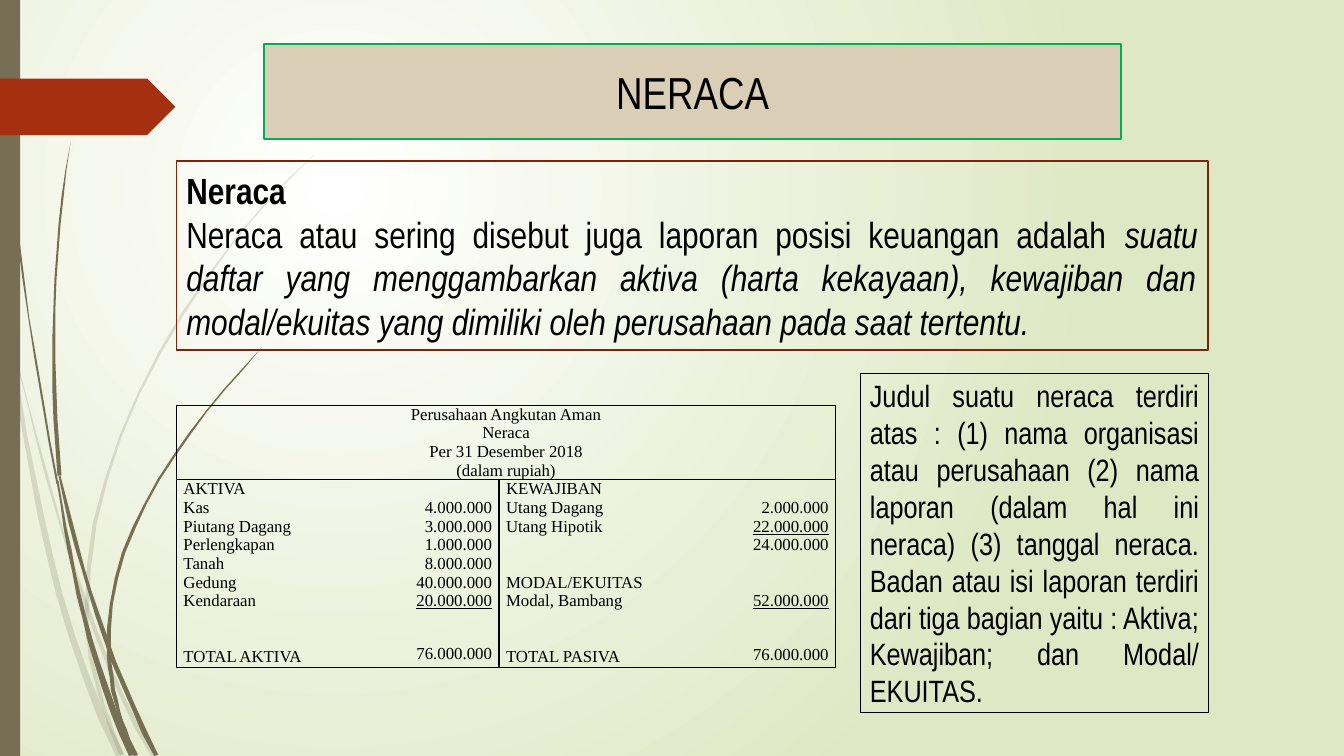
"""Builds the slide that explains the balance sheet (neraca)."""
from dataclasses import dataclass, field
from math import hypot

from lxml import etree
from pptx import Presentation
from pptx.dml.color import RGBColor
from pptx.enum.shapes import MSO_SHAPE
from pptx.enum.text import MSO_ANCHOR, MSO_AUTO_SIZE, PP_ALIGN
from pptx.oxml.ns import qn
from pptx.util import Inches, Pt

CELL = Inches(0.01)
COLUMNS, ROWS = 1333, 750
TITLE_ONLY = 5
LINE_HEIGHT = 13.35
BLADE_STEPS = 12
NO_STYLE = "{2D5ABB26-0587-4C30-8999-92F81FD0307C}"

RECTANGLE, PENTAGON = MSO_SHAPE.RECTANGLE, MSO_SHAPE.PENTAGON
MIDDLE = MSO_ANCHOR.MIDDLE
NO_AUTOFIT = MSO_AUTO_SIZE.NONE
CENTER, JUSTIFY, RIGHT = PP_ALIGN.CENTER, PP_ALIGN.JUSTIFY, PP_ALIGN.RIGHT

BLACK = RGBColor(0x00, 0x00, 0x00)
WHITE = RGBColor(0xFF, 0xFF, 0xFF)
PALE_GREEN = RGBColor(0xDF, 0xE8, 0xC4)
OLIVE = RGBColor(0x76, 0x6F, 0x54)
RUST = RGBColor(0xA5, 0x30, 0x10)
DARK_RUST = RGBColor(0x7A, 0x24, 0x0C)
SAND = RGBColor(0xDB, 0xCE, 0xB7)
GREEN = RGBColor(0x00, 0xB0, 0x50)

Point = tuple[float, float]


@dataclass(frozen=True)
class Blade:
    """A grass blade along a cubic curve, with its end widths."""
    curve: tuple[Point, Point, Point, Point]
    widths: tuple[float, float]
    opacity: int = 100

    def outline(self) -> list[Point]:
        """Return the points around the blade."""
        a, b, c, d = self.curve
        near, far = [], []
        for step in range(BLADE_STEPS + 1):
            t = step / BLADE_STEPS
            u = 1 - t
            x, y = (u**3 * a[i] + 3 * u * u * t * b[i] + 3 * u * t * t * c[i] + t**3 * d[i]
                    for i in (0, 1))
            dx, dy = (u * u * (b[i] - a[i]) + 2 * u * t * (c[i] - b[i]) + t * t * (d[i] - c[i])
                      for i in (0, 1))
            half = (u * self.widths[0] + t * self.widths[1]) / 2 / hypot(dx, dy)
            near.append((x - dy * half, min(y + dx * half, ROWS)))
            far.append((x + dy * half, min(y - dx * half, ROWS)))
        return near + far[::-1]


@dataclass(frozen=True)
class Area:
    """A block of grid columns and rows."""
    column: int
    row: int
    width: int
    height: int

    def lengths(self) -> tuple[int, ...]:
        """Return left, top, width and height."""
        return tuple(CELL * n for n in (self.column, self.row, self.width, self.height))


@dataclass(frozen=True)
class Words:
    """A run of text with its font formats."""
    text: str
    formats: dict = field(default_factory=dict)


@dataclass(frozen=True)
class Panel:
    """A framed text box."""
    area: Area
    line: RGBColor
    line_width: float
    size: int
    align: PP_ALIGN
    paragraphs: tuple[tuple[Words, ...], ...]
    fill: RGBColor | None = None


@dataclass(frozen=True)
class Entry:
    """A line of a ledger cell, with the blank lines above it."""
    text: str
    gap: float = 0
    underline: bool = False


@dataclass(frozen=True)
class Ledger:
    """A table cell with its entries and bordered sides."""
    entries: tuple[Entry, ...]
    align: PP_ALIGN
    sides: str
    top_gap: float = 0


BLADES = (
    Blade(((0, 290), (26, 420), (41, 593), (119, 750)), (3, 8), 20),
    Blade(((14, 345), (39, 450), (87, 644), (152, 750)), (1, 5), 20),
    Blade(((86, 608), (82, 430), (209, 247), (312, 153)), (4, 1), 20),
    Blade(((86, 608), (86, 650), (100, 700), (121, 750)), (4, 4), 20),
    Blade(((3, 0), (4, 157), (24, 310), (57, 480)), (1, 2)),
    Blade(((57, 477), (72, 570), (89, 656), (131, 750)), (2, 7)),
    Blade(((70, 141), (52, 250), (49, 359), (59, 472)), (1, 4)),
    Blade(((59, 472), (80, 566), (107, 656), (155, 750)), (3, 5)),
    Blade(((108, 625), (112, 520), (184, 428), (260, 344)), (4, 1)),
    Blade(((108, 625), (106, 675), (119, 720), (135, 750)), (4, 4)),
)
STRIPE = Area(0, 0, 20, ROWS)
RIBBON = Area(0, 78, 174, 56)
TITLE = Panel(Area(262, 44, 850, 94), GREEN, 1.25, 32, CENTER, ((Words("NERACA"),),), SAND)
PANELS = (
    Panel(Area(175, 160, 1023, 187), DARK_RUST, 1.25, 26, JUSTIFY, (
        (Words("Neraca", {"bold": True}),),
        (Words("Neraca atau sering disebut juga laporan posisi keuangan adalah "),
         Words("suatu daftar yang menggambarkan aktiva (harta kekayaan), kewajiban dan "
               "modal/ekuitas yang dimiliki oleh perusahaan pada saat tertentu.",
               {"italic": True})))),
    Panel(Area(853, 370, 346, 337), BLACK, 0.5, 22, JUSTIFY, ((Words(
        "Judul suatu neraca terdiri atas : (1) nama organisasi atau perusahaan (2) nama "
        "laporan (dalam hal ini neraca) (3) tanggal neraca. Badan atau isi laporan terdiri "
        "dari tiga bagian yaitu : Aktiva; Kewajiban; dan Modal/ EKUITAS."),),)),
)
SHEET = Area(175, 402, 654, 260)
SHEET_COLUMNS = (153, 167, 167, 167)
SHEET_ROWS = (74, 186)
HEADING = Ledger(tuple(map(Entry, ("Perusahaan Angkutan Aman", "Neraca", "Per 31 Desember 2018",
                                   "(dalam rupiah)"))), CENTER, "LRTB")
LEDGERS = (
    Ledger((*map(Entry, ("AKTIVA", "Kas", "Piutang Dagang", "Perlengkapan", "Tanah", "Gedung",
                         "Kendaraan")), Entry("TOTAL AKTIVA", 2)), JUSTIFY, "LTB"),
    Ledger((*map(Entry, ("4.000.000", "3.000.000", "1.000.000", "8.000.000", "40.000.000")),
            Entry("20.000.000", underline=True), Entry("76.000.000", 1.85)), RIGHT, "RTB", 1),
    Ledger((*map(Entry, ("KEWAJIBAN", "Utang Dagang", "Utang Hipotik")),
            Entry("MODAL/EKUITAS", 2), Entry("Modal, Bambang"), Entry("TOTAL PASIVA", 2)),
           JUSTIFY, "TB"),
    Ledger((Entry("2.000.000"), Entry("22.000.000", underline=True), Entry("24.000.000"),
            Entry("52.000.000", 2, True), Entry("76.000.000", 1.85)), RIGHT, "RTB", 1),
)


def add_words(para, words: Words, name: str, size: int) -> None:
    """Add one formatted run to a paragraph."""
    span = para.add_run()
    span.text = words.text
    for key, value in {"name": name, "size": Pt(size), **words.formats}.items():
        setattr(span.font, key, value)
    span.font.color.rgb = BLACK


def next_para(frame, index: int):
    """Return the first paragraph, or a new one after it."""
    return frame.add_paragraph() if index else frame.paragraphs[0]


def paint_background(page) -> None:
    """Fill the page with a circular gradient."""
    fill = page.background.fill
    fill.gradient()
    for stop, color, position in zip(fill.gradient_stops, (WHITE, PALE_GREEN), (0, 1)):
        stop.color.rgb, stop.position = color, position
    linear = next(page.element.iter(qn("a:lin")))
    circle = etree.Element(qn("a:path"), path="circle")
    etree.SubElement(circle, qn("a:fillToRect"), l="50000", t="50000", r="100000", b="100000")
    linear.getparent().replace(linear, circle)


def paint_plain(shape, color: RGBColor, opacity: int = 100) -> None:
    """Give a shape a flat fill without line or shadow."""
    shape.shadow.inherit = False
    shape.line.fill.background()
    shape.fill.solid()
    shape.fill.fore_color.rgb = color
    if opacity < 100:
        tint = next(shape.element.spPr.iter(qn("a:srgbClr")))
        etree.SubElement(tint, qn("a:alpha"), val=str(opacity * 1000))


def draw_blade(page, blade: Blade) -> None:
    """Draw one grass blade."""
    start, *others = blade.outline()
    builder = page.shapes.build_freeform(*start, scale=float(CELL))
    builder.add_line_segments(others, close=True)
    paint_plain(builder.convert_to_shape(), OLIVE, blade.opacity)


def format_panel(shape, panel: Panel) -> None:
    """Place, frame and fill in a text box or the title."""
    for key, value in zip(("left", "top", "width", "height"), panel.area.lengths()):
        setattr(shape, key, value)
    if panel.fill is None:
        shape.fill.background()
    else:
        shape.fill.solid()
        shape.fill.fore_color.rgb = panel.fill
    shape.line.color.rgb, shape.line.width = panel.line, Pt(panel.line_width)
    frame = shape.text_frame
    formats = {"word_wrap": True, "auto_size": NO_AUTOFIT, "vertical_anchor": MIDDLE}
    for key, value in formats.items():
        setattr(frame, key, value)
    for index, paragraph in enumerate(panel.paragraphs):
        para = next_para(frame, index)
        para.alignment = panel.align
        for words in paragraph:
            add_words(para, words, "Arial Narrow", panel.size)


def fill_cell(cell, ledger: Ledger) -> None:
    """Write the entries of a cell and draw its borders."""
    margins = {"margin_left": Inches(0.07), "margin_right": Inches(0.07),
               "margin_top": Pt(ledger.top_gap * LINE_HEIGHT), "margin_bottom": 0}
    for key, value in margins.items():
        setattr(cell, key, value)
    for index, entry in enumerate(ledger.entries):
        para = next_para(cell.text_frame, index)
        para.alignment, para.space_before = ledger.align, Pt(entry.gap * LINE_HEIGHT)
        add_words(para, Words(entry.text, {"underline": entry.underline}), "Times New Roman", 12)
    cell.fill.background()
    properties = cell._tc.get_or_add_tcPr()
    for index, side in enumerate(ledger.sides):
        border = etree.Element(qn(f"a:ln{side}"), w=str(Pt(1)))
        solid = etree.SubElement(border, qn("a:solidFill"))
        etree.SubElement(solid, qn("a:srgbClr"), val=str(BLACK))
        properties.insert(index, border)


def draw_sheet(page) -> None:
    """Draw the balance sheet table."""
    table = page.shapes.add_table(2, len(LEDGERS), *SHEET.lengths()).table
    table.first_row = table.horz_banding = False
    next(table._tbl.iter(qn("a:tableStyleId"))).text = NO_STYLE
    for column, width in zip(table.columns, SHEET_COLUMNS):
        column.width = CELL * width
    for row, height in zip(table.rows, SHEET_ROWS):
        row.height = CELL * height
    table.cell(0, 0).merge(table.cell(0, len(LEDGERS) - 1))
    fill_cell(table.cell(0, 0), HEADING)
    for index, ledger in enumerate(LEDGERS):
        fill_cell(table.cell(1, index), ledger)


def main() -> None:
    """Build the deck and save it."""
    deck = Presentation()
    deck.slide_width, deck.slide_height = CELL * COLUMNS, CELL * ROWS
    page = deck.slides.add_slide(deck.slide_layouts[TITLE_ONLY])
    paint_background(page)
    for blade in BLADES:
        draw_blade(page, blade)
    for kind, area, color in ((RECTANGLE, STRIPE, OLIVE), (PENTAGON, RIBBON, RUST)):
        paint_plain(page.shapes.add_shape(kind, *area.lengths()), color)
    format_panel(page.shapes.title, TITLE)
    draw_sheet(page)
    for panel in PANELS:
        box = page.shapes.add_shape(RECTANGLE, *panel.area.lengths())
        box.shadow.inherit = False
        format_panel(box, panel)
    deck.save("out.pptx")


if __name__ == "__main__":
    main()
